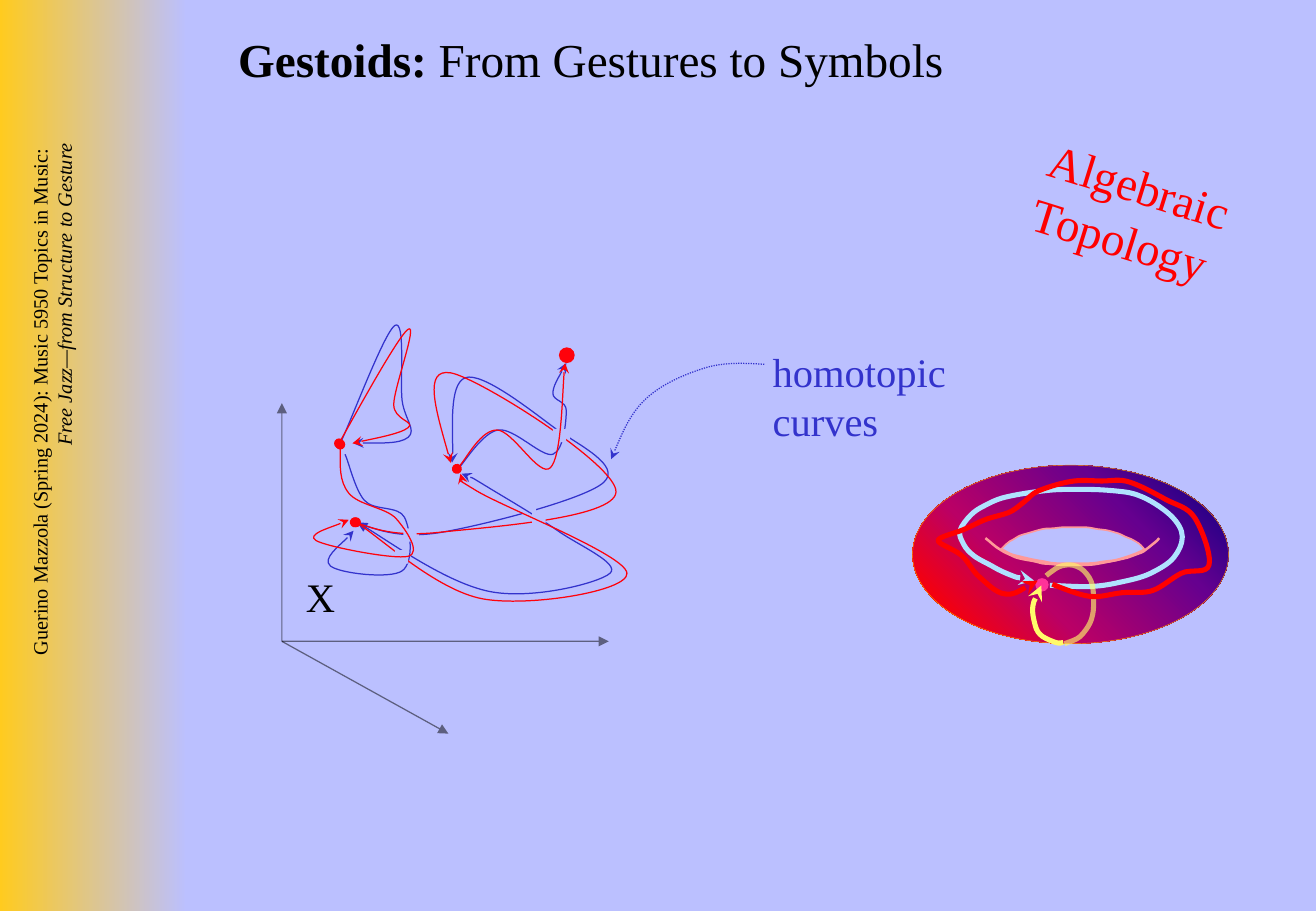
from itertools import pairwise

from lxml.etree import SubElement
from pptx import Presentation
from pptx.dml.color import RGBColor
from pptx.enum.dml import MSO_LINE
from pptx.enum.shapes import MSO_CONNECTOR, MSO_SHAPE
from pptx.enum.text import MSO_ANCHOR, MSO_AUTO_SIZE, PP_ALIGN
from pptx.oxml.ns import qn
from pptx.util import Inches, Pt

CELL = Inches(0.01)
COLS, ROWS = 1083, 750
FONT = "Times New Roman"

BLACK = RGBColor(0x00, 0x00, 0x00)
PERIWINKLE = RGBColor(0xBB, 0xC0, 0xFF)
AMBER = RGBColor(0xFF, 0xCB, 0x1F)
BLUE = RGBColor(0x33, 0x33, 0xCC)
SCARLET = RGBColor(0xFF, 0x02, 0x0B)
RED = RGBColor(0xFF, 0x00, 0x00)
ORANGE = RGBColor(0xFF, 0x99, 0x00)
SALMON = RGBColor(0xFF, 0x99, 0x99)
PINK = RGBColor(0xFF, 0x33, 0x99)
SKY = RGBColor(0xB0, 0xE2, 0xFF)
YELLOW = RGBColor(0xFF, 0xFA, 0x6A)
TORUS_STOPS = [(0, RGBColor(0xFF, 0x82, 0x00)), (10, RED),
               (35, RGBColor(0xBA, 0x00, 0x66)),
               (70, RGBColor(0x66, 0x00, 0x8F)),
               (100, RGBColor(0x00, 0x00, 0x82))]


def write(tf, *paras, size=24, color=BLACK, align=PP_ALIGN.LEFT, wrap=False,
          anchor=MSO_ANCHOR.TOP):
    tf.auto_size = MSO_AUTO_SIZE.NONE
    tf.word_wrap = wrap
    tf.vertical_anchor = anchor
    for i, runs in enumerate(paras):
        p = tf.add_paragraph() if i else tf.paragraphs[0]
        p.alignment = align
        p.space_before = Pt(0)
        for text, style in runs:
            if text == "\n":
                p.add_line_break()
                continue
            r = p.add_run()
            r.text = text
            r.font.name, r.font.size = FONT, Pt(size)
            r.font.color.rgb = color
            r.font.bold, r.font.italic = style == "bold", style == "italic"


def spline(knots, soft):
    last = len(knots) - 1
    slopes = [[(b - a) / 6 for a, b in zip(knots[max(i - 1, 0)], knots[min(i + 1, last)])]
              for i in range(last + 1)]
    points = []
    for i, (a, b) in enumerate(pairwise(knots)):
        c1 = [v + d for v, d in zip(a, slopes[i])]
        c2 = [v - d for v, d in zip(b, slopes[i + 1])]
        if i == 0 and "start" in soft:
            c1 = [(u + v) / 2 for u, v in zip(a, c2)]
        if i == last - 1 and "end" in soft:
            c2 = [(u + v) / 2 for u, v in zip(c1, b)]
        points += [c1, c2, b]
    return [(round(x), round(y)) for x, y in points]


class Board:
    def __init__(self, s):
        self.s = s
        s.background.fill.solid()
        s.background.fill.fore_color.rgb = PERIWINKLE

    def cells(self, *values):
        return [round(v * CELL) for v in values]

    def title(self, box, *paras, **style):
        sp = self.s.shapes.title
        sp.left, sp.top, sp.width, sp.height = self.cells(*box)
        write(sp.text_frame, *paras, **style)

    def text(self, box, *paras, rotation=0, **style):
        sp = self.s.shapes.add_textbox(*self.cells(*box))
        sp.rotation = rotation
        write(sp.text_frame, *paras, **style)

    def shape(self, kind, box, fill):
        sp = self.s.shapes.add_shape(kind, *self.cells(*box))
        sp.shadow.inherit = False
        sp.line.fill.background()
        sp.fill.solid()
        sp.fill.fore_color.rgb = fill
        return sp

    def gradient(self, kind, box, stops, angle=0):
        sp = self.shape(kind, box, PERIWINKLE)
        sp.fill.gradient()
        sp.fill.gradient_angle = angle
        gs_list = sp._element.spPr.find(".//" + qn("a:gsLst"))
        for gs in list(gs_list):
            gs_list.remove(gs)
        for pos, color in stops:
            gs = SubElement(gs_list, qn("a:gs"), pos=str(pos * 1000))
            SubElement(gs, qn("a:srgbClr"), val=str(color))
        return sp

    def stroke(self, sp, color, width, head=None, tail=None, alpha=None, dash=None):
        sp.line.color.rgb = color
        sp.line.width = Pt(width)
        if dash:
            sp.line.dash_style = dash
        ln = sp.line._ln
        if alpha:
            SubElement(ln.find(".//" + qn("a:srgbClr")), qn("a:alpha"), val=str(alpha * 1000))
        for tag, end in (("a:headEnd", head), ("a:tailEnd", tail)):
            if end:
                SubElement(ln, qn(tag), type=end)

    def arrow(self, start, end):
        sp = self.s.shapes.add_connector(MSO_CONNECTOR.STRAIGHT, *self.cells(*start, *end))
        SubElement(sp._element.spPr, qn("a:effectLst"))
        self.stroke(sp, BLACK, 0.75, tail="triangle", alpha=50)

    def curve(self, knots, color, width=0.75, fill=None, soft=(), **ends):
        knots = list(zip(knots[::2], knots[1::2]))
        builder = self.s.shapes.build_freeform(*knots[0], scale=CELL)
        builder.add_line_segments(spline(knots, soft), close=False)
        sp = builder.convert_to_shape()
        sp.shadow.inherit = False
        if fill:
            sp.fill.solid()
            sp.fill.fore_color.rgb = fill
        else:
            sp.fill.background()
        outline = sp._element.spPr.find(".//" + qn("a:path"))
        segments = outline.findall(qn("a:lnTo"))
        for i in range(0, len(segments), 3):
            bezier = SubElement(outline, qn("a:cubicBezTo"))
            for segment in segments[i:i + 3]:
                bezier.append(segment[0])
                outline.remove(segment)
        self.stroke(sp, color, width, **ends)

    def gaps(self, *corners):
        for x, y in corners:
            self.shape(MSO_SHAPE.RECTANGLE, (x, y, 11, 11), PERIWINKLE)


def main():
    prs = Presentation()
    prs.slide_width, prs.slide_height = COLS * CELL, ROWS * CELL
    b = Board(prs.slides.add_slide(prs.slide_layouts[5]))

    b.gradient(MSO_SHAPE.RECTANGLE, (0, 0, 154, ROWS), [(0, AMBER), (100, PERIWINKLE)])
    b.text((-240, 366, 565, 50),
           [("Guerino Mazzola (Spring 2024): Music 5950 Topics in Music: ", None), ("\n", None),
            ("Free Jazz—from Structure to Gesture", "italic")],
           rotation=270, size=12, align=PP_ALIGN.RIGHT, wrap=True)
    b.title((186, 20, 644, 57), [("Gestoids:", "bold"), (" From Gestures to Symbols", None)],
            size=28, wrap=True, anchor=MSO_ANCHOR.MIDDLE)

    blue = dict(color=BLUE, tail="stealth")
    b.curve([293, 430, 365, 438, 497, 397, 456, 352, 383, 311, 372, 381], soft=("start",), **blue)
    b.curve([280, 365, 325, 268, 331, 330, 336, 360, 291, 365], **blue)
    b.gaps((458, 352), (430, 416), (334, 435))
    b.curve([294, 430, 403, 487, 502, 472, 459, 437, 398, 399, 380, 390], head="triangle", **blue)
    b.gaps((327, 453))
    b.curve([377, 386, 410, 354, 455, 374, 466, 338, 455, 324, 466, 299], **blue)
    b.curve([284, 374, 300, 412, 333, 426, 331, 470, 272, 466, 291, 437], **blue)
    b.text((626, 281, 163, 90), [("homotopic", None)], [("curves", None)], color=BLUE)
    b.curve([503, 378, 532, 328, 580, 303, 629, 300], BLUE, soft=("start", "end"),
            head="stealth", dash=MSO_LINE.ROUND_DOT)

    for tip in ((369, 604), (501, 528), (232, 332)):
        b.arrow((232, 528), tip)
    b.text((242, 466, 44, 50), [("X", None)])

    red = dict(color=SCARLET, head="oval", tail="stealth")
    b.curve([292, 430, 364, 438, 507, 405, 371, 307, 371, 381], soft=("start", "end"), **red)
    b.curve([279, 365, 336, 271, 324, 333, 336, 352, 290, 365], **red)
    b.shape(MSO_SHAPE.OVAL, (460, 286, 13, 13), SCARLET)
    b.gaps((455, 353), (438, 422), (332, 435))
    b.curve([293, 430, 397, 493, 516, 472, 392, 404, 379, 390], **red)
    b.gaps((325, 453))
    b.curve([376, 386, 409, 354, 453, 385, 465, 299], **red)
    b.curve([280, 366, 287, 406, 326, 427, 336, 458, 260, 445, 287, 428], soft=("start",), **red)

    torus = b.gradient(MSO_SHAPE.OVAL, (751, 383, 260, 147), TORUS_STOPS, angle=45)
    b.stroke(torus, ORANGE, 0.25)
    b.curve([811, 443, 817, 448, 824, 453, 834, 458, 851, 462, 861, 464, 874, 465, 891, 465,
             904, 464, 919, 461, 928, 459, 939, 455, 945, 451, 950, 447, 954, 443], SALMON, 1.5)
    b.curve([823, 453, 828, 448, 834, 444, 842, 440, 856, 436, 865, 435, 876, 434, 889, 434,
             900, 435, 913, 437, 920, 439, 929, 443, 935, 446, 939, 449, 942, 453],
            SALMON, 1, fill=PERIWINKLE)
    b.curve([824, 452, 834, 457, 851, 461, 862, 463, 875, 464, 891, 464, 905, 463,
             919, 461, 929, 458, 939, 454, 942, 452], SALMON, 1.5, fill=PERIWINKLE)
    b.shape(MSO_SHAPE.OVAL, (852, 476, 11, 11), PINK)
    b.curve([864, 482, 892, 483, 919, 480, 947, 472, 966, 459, 973, 442, 964, 425, 944, 411,
             925, 405, 897, 403, 875, 403, 852, 405, 825, 410, 809, 417, 799, 424, 790, 437,
             793, 448, 802, 458, 818, 467, 833, 474, 851, 478], SKY, 3, tail="stealth")
    b.curve([857, 482, 850, 499, 852, 515, 858, 524, 869, 529, 875, 529], YELLOW, 3,
            head="stealth")
    b.curve([876, 530, 889, 524, 897, 513, 900, 498, 899, 482, 892, 470, 880, 465, 869, 468,
             861, 474], YELLOW, 3, alpha=64)
    b.curve([866, 481, 897, 491, 923, 488, 949, 486, 972, 472, 995, 465, 983, 426, 959, 411,
             930, 397, 907, 396, 884, 396, 855, 404, 843, 413, 830, 422, 813, 427, 793, 436,
             772, 445, 791, 457, 806, 475, 827, 489, 854, 478], RED, 3, tail="stealth")

    b.text((845, 123, 173, 103), [("Algebraic", None), ("\n", None), ("Topology", None)],
           rotation=17.3, size=28, color=RED)
    prs.save("out.pptx")


if __name__ == "__main__":
    main()
